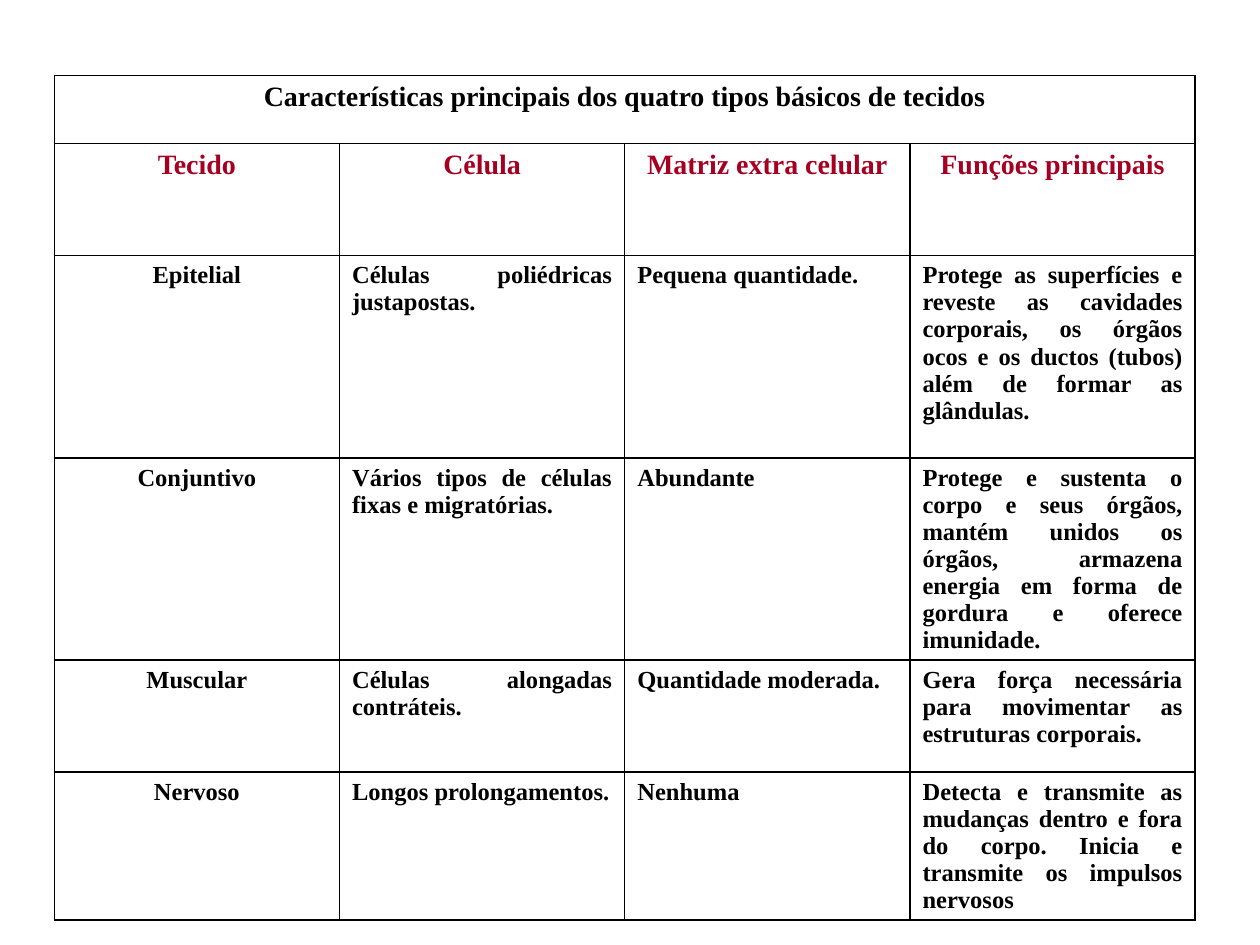
from lxml.etree import SubElement
from pptx import Presentation
from pptx.dml.color import RGBColor as Color
from pptx.enum.text import PP_ALIGN as Align
from pptx.oxml.ns import qn
from pptx.util import Pt

COLORS = {"text": "000000", "heading": "A50021", "border": "000000"}
FONT = "Times New Roman"
TITLE = "Características principais dos quatro tipos básicos de tecidos"
HEADINGS = ["Tecido", "Célula", "Matriz extra celular", "Funções principais"]
TISSUES = [
    ["Epitelial", "Células poliédricas justapostas.", "Pequena quantidade.",
     "Protege as superfícies e reveste as cavidades corporais, os órgãos ocos "
     "e os ductos (tubos) além de formar as glândulas."],
    ["Conjuntivo", "Vários tipos de células fixas e migratórias.", "Abundante",
     "Protege e sustenta o corpo e seus órgãos, mantém unidos os órgãos, "
     "armazena energia em forma de gordura e oferece imunidade."],
    ["Muscular", "Células alongadas contráteis.", "Quantidade moderada.",
     "Gera força necessária para movimentar as estruturas corporais."],
    ["Nervoso", "Longos prolongamentos.", "Nenhuma",
     "Detecta e transmite as mudanças dentro e fora do corpo. "
     "Inicia e transmite os impulsos nervosos"],
]
ROW_HEIGHTS = [38.9, 64, 115.6, 90, 64, 64]


def add_borders(cell):
    """Draw a thin line on each side of a cell."""
    properties = cell._tc.get_or_add_tcPr()
    for position, side in enumerate(("lnL", "lnR", "lnT", "lnB")):
        line = properties.makeelement(qn(f"a:{side}"), w=str(Pt(1)))
        fill = SubElement(line, qn("a:solidFill"))
        SubElement(fill, qn("a:srgbClr"), val=COLORS["border"])
        properties.insert(position, line)


def write_cell(cell, text, size, color, align):
    """Set the text of a cell and its format."""
    cell.text_frame.text = text
    para = cell.text_frame.paragraphs[0]
    para.alignment = align
    for span in para.runs:
        span.font.name = FONT
        span.font.size = Pt(size)
        span.font.bold = True
        span.font.color.rgb = Color.from_string(COLORS[color])


def add_tissue_table(page, left, top, width, height):
    """Place the table of tissue types in the given box."""
    columns = len(HEADINGS)
    frame = page.shapes.add_table(len(ROW_HEIGHTS), columns, Pt(left), Pt(top),
                                  Pt(width), Pt(height))
    table = frame.table
    table.first_row = table.horz_banding = False
    for column in table.columns:
        column.width = Pt(width / columns)
    for row, row_height in zip(table.rows, ROW_HEIGHTS):
        row.height = Pt(row_height)
    for cell in table.iter_cells():
        cell.fill.background()
        add_borders(cell)

    title = table.cell(0, 0)
    title.merge(table.cell(0, columns - 1))
    write_cell(title, TITLE, 16, "text", Align.CENTER)
    for column, heading in enumerate(HEADINGS):
        write_cell(table.cell(1, column), heading, 16, "heading", Align.CENTER)
    for row, tissue in enumerate(TISSUES, start=2):
        for column, text in enumerate(tissue):
            align = Align.JUSTIFY if column else Align.CENTER
            write_cell(table.cell(row, column), text, 14, "text", align)
    frame.height = Pt(height)


def main():
    """Build the deck and save it."""
    deck = Presentation()
    deck.slide_width, deck.slide_height = Pt(720), Pt(540)
    page = deck.slides.add_slide(deck.slide_layouts[6])
    add_tissue_table(page, 31, 43.2, 652, 498)
    deck.save("out.pptx")


if __name__ == "__main__":
    main()
